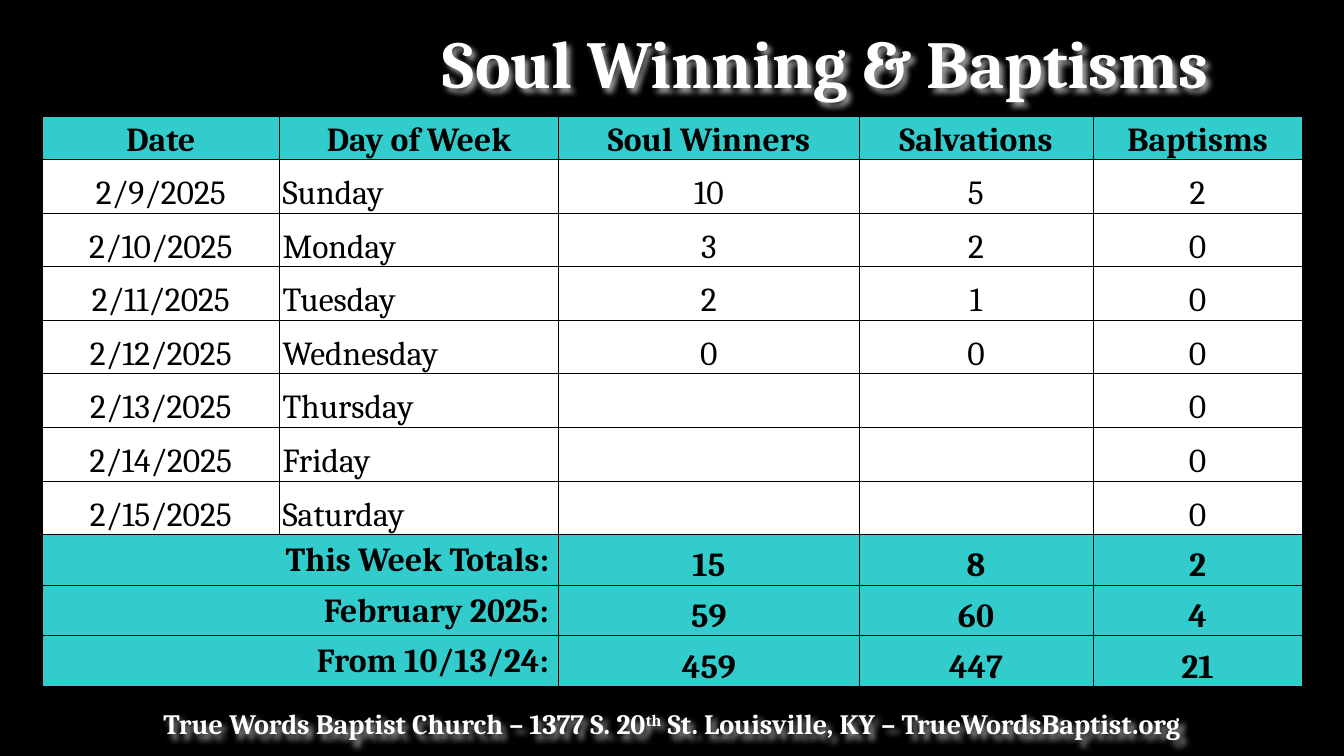
"""Build the weekly soul winning and baptisms report slide."""
from lxml.etree import SubElement
from pptx import Presentation
from pptx.dml.color import RGBColor
from pptx.enum.text import MSO_ANCHOR as Anchor, MSO_AUTO_SIZE as AutoSize, PP_ALIGN as Align
from pptx.oxml import parse_xml
from pptx.oxml.ns import nsdecls, qn
from pptx.util import Cm, Pt

BLACK = RGBColor(0x00, 0x00, 0x00)
WHITE = RGBColor(0xFF, 0xFF, 0xFF)
TEAL = RGBColor(0x33, 0xCC, 0xCC)

HEADINGS = ["Date", "Day of Week", "Soul Winners", "Salvations", "Baptisms"]
DAYS = [
    ["2/9/2025", "Sunday", "10", "5", "2"],
    ["2/10/2025", "Monday", "3", "2", "0"],
    ["2/11/2025", "Tuesday", "2", "1", "0"],
    ["2/12/2025", "Wednesday", "0", "0", "0"],
    ["2/13/2025", "Thursday", "", "", "0"],
    ["2/14/2025", "Friday", "", "", "0"],
    ["2/15/2025", "Saturday", "", "", "0"],
]
TOTALS = [
    ["This Week Totals:", "", "15", "8", "2"],
    ["February 2025:", "", "59", "60", "4"],
    ["From 10/13/24:", "", "459", "447", "21"],
]
COLUMN_WIDTHS = [5.97, 7.04, 7.57, 5.89, 5.28]
ROW_HEIGHTS = [1.07] + [1.35] * len(DAYS) + [1.27] * len(TOTALS)


def add_run(paragraph, text, size, color, bold=True):
    run = paragraph.add_run()
    run.text = text
    run.font.name = "Cambria"
    run.font.size = Pt(size)
    run.font.bold = bold
    run.font.color.rgb = color
    return run


def add_caption(slide, left, top, width, height):
    box = slide.shapes.add_textbox(Cm(left), Cm(top), Cm(width), Cm(height))
    box.text_frame.word_wrap = True
    box.text_frame.auto_size = AutoSize.SHAPE_TO_FIT_TEXT
    box._element.spPr.append(parse_xml(
        f'<a:effectLst {nsdecls("a")}>'
        '<a:outerShdw blurRad="50800" dist="38100" dir="2700000" algn="tl" rotWithShape="0">'
        '<a:srgbClr val="FFFFFF"><a:alpha val="60000"/></a:srgbClr>'
        '</a:outerShdw></a:effectLst>'))
    paragraph = box.text_frame.paragraphs[0]
    paragraph.alignment = Align.CENTER
    return paragraph


presentation = Presentation()
presentation.slide_width = Cm(33.87)
presentation.slide_height = Cm(19.05)
slide = presentation.slides.add_slide(presentation.slide_layouts[6])
slide.background.fill.solid()
slide.background.fill.fore_color.rgb = BLACK

footer = add_caption(slide, 0, 17.68, 33.87, 1.12)
add_run(footer, "True Words Baptist Church – 1377 S. 20", 20, WHITE)
ordinal = add_run(footer, "th", 20, WHITE)
ordinal.font._element.set("baseline", "30000")
add_run(footer, " St. Louisville, KY – TrueWordsBaptist.org", 20, WHITE)

title = add_caption(slide, 8.56, 0.28, 24.49, 2.34)
title.line_spacing = 1.07
add_run(title, "Soul Winning & Baptisms", 48, WHITE)

rows = [HEADINGS] + DAYS + TOTALS
first_total = 1 + len(DAYS)
table = slide.shapes.add_table(
    len(rows), len(HEADINGS), Cm(1.07), Cm(2.92),
    Cm(sum(COLUMN_WIDTHS)), Cm(sum(ROW_HEIGHTS))).table
table.first_row = False
table.horz_banding = False
for column, width in zip(table.columns, COLUMN_WIDTHS):
    column.width = Cm(width)
for row, height in zip(table.rows, ROW_HEIGHTS):
    row.height = Cm(height)

for row_index, values in enumerate(rows):
    is_day = 0 < row_index < first_total
    is_total = row_index >= first_total
    for column_index, text in enumerate(values):
        cell = table.cell(row_index, column_index)
        is_label = is_total and column_index == 0
        cell.vertical_anchor = Anchor.BOTTOM
        cell.margin_left = cell.margin_right = Cm(0.25 if is_label else 0.08)
        cell.margin_top = Cm(0.13 if is_label else 0.08)
        cell.margin_bottom = Cm(0.13 if is_label else 0)
        properties = cell._tc.get_or_add_tcPr()
        for side in ("a:lnL", "a:lnR", "a:lnT", "a:lnB"):
            border = SubElement(properties, qn(side), w=str(Pt(0.5)))
            SubElement(SubElement(border, qn("a:solidFill")), qn("a:srgbClr"), val=str(BLACK))
        cell.fill.solid()
        cell.fill.fore_color.rgb = WHITE if is_day else TEAL
        paragraph = cell.text_frame.paragraphs[0]
        if is_label:
            paragraph.alignment = Align.RIGHT
        elif is_day and column_index == 1:
            paragraph.alignment = Align.LEFT
        else:
            paragraph.alignment = Align.CENTER
        if text:
            add_run(paragraph, text, 24, BLACK, bold=not is_day)
    if is_total:
        table.cell(row_index, 0).merge(table.cell(row_index, 1))

presentation.save("out.pptx")
